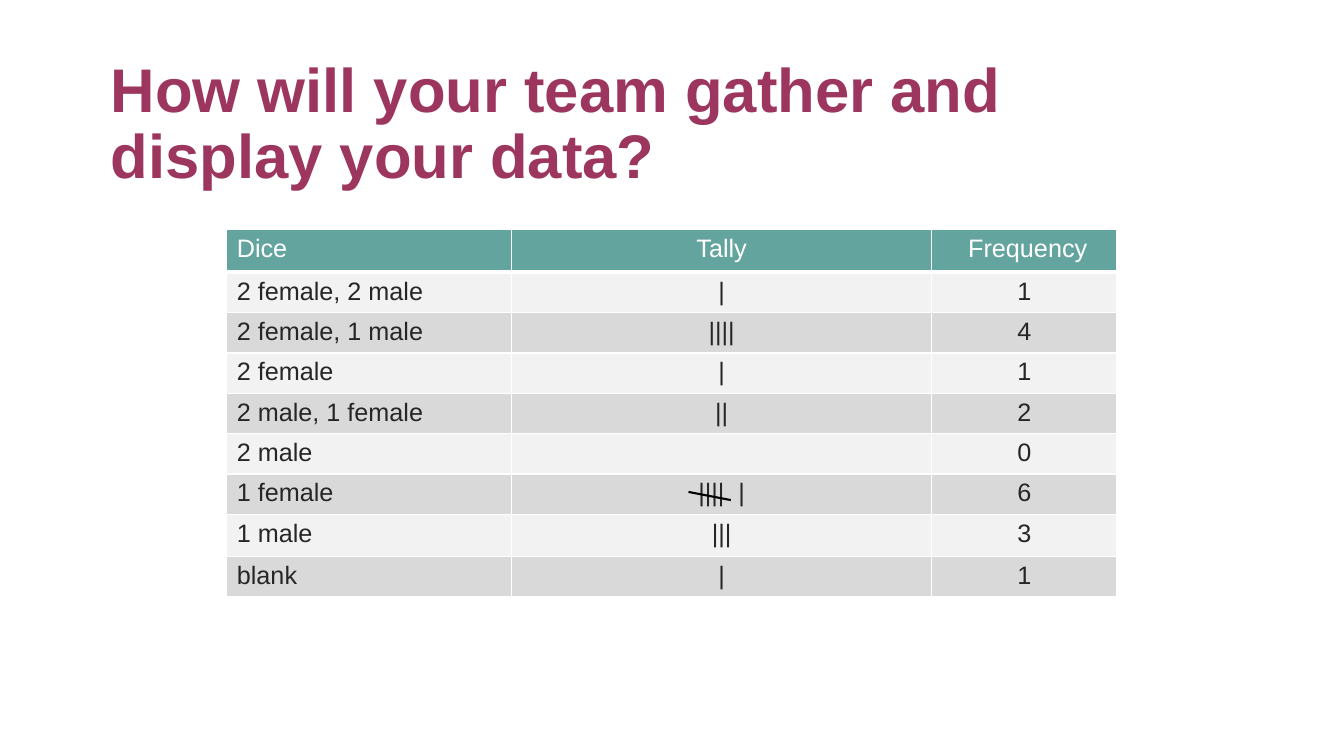
from dataclasses import dataclass

from lxml import etree
from pptx import Presentation
from pptx.dml.color import RGBColor
from pptx.enum import shapes, text
from pptx.oxml import ns
from pptx.util import Pt


@dataclass(frozen=True)
class Theme:
    font: str = "Arial"
    title_size: float = 44
    table_size: float = 18
    title: str = "9D365E"
    header: str = "63A49F"
    bands: tuple = ("F2F2F2", "D9D9D9")
    ink: str = "262626"
    white: str = "FFFFFF"
    stroke: str = "000000"


@dataclass(frozen=True)
class Box:
    left: float
    top: float
    width: float
    height: float

    def lengths(self):
        return [Pt(n) for n in (self.left, self.top, self.width, self.height)]


THEME = Theme()
HEADINGS = ("Dice", "Tally", " Frequency")
OUTCOMES = (
    ("2 female, 2 male", "|", "1"),
    ("2 female, 1 male", "||||", "4"),
    ("2 female", "|", "1"),
    ("2 male, 1 female", "||", "2"),
    ("2 male", "", "0"),
    ("1 female", "||||  |", "6"),
    ("1 male", "|||", "3"),
    ("blank", "|", "1"),
)
COLUMN_SHARES = (0.32, 0.472, 0.208)
ROW_HEIGHTS = (30.24, 28.8, 27.4, 27.4, 27.4, 27.4, 28.8, 30.24, 27.4)


def style_font(font, size, colour, bold=False):
    font.name = THEME.font
    font.size = Pt(size)
    font.bold = bold
    font.color.rgb = RGBColor.from_string(colour)


def add_title(page, box, words):
    frame = page.shapes.add_textbox(*box.lengths()).text_frame
    frame.word_wrap = True
    frame.vertical_anchor = text.MSO_ANCHOR.MIDDLE
    frame.margin_left = frame.margin_right = 0
    frame.margin_top = frame.margin_bottom = 0
    frame.text = words
    para = frame.paragraphs[0]
    para.line_spacing = 0.9
    style_font(para.runs[0].font, THEME.title_size, THEME.title, bold=True)


def add_borders(cell, bottom_width):
    """Draw white cell borders; call before the fill, which must follow them."""
    properties = cell._tc.get_or_add_tcPr()
    for side, width in (("L", 1), ("R", 1), ("T", 1), ("B", bottom_width)):
        line = etree.SubElement(properties, ns.qn(f"a:ln{side}"), w=str(Pt(width)))
        fill = etree.SubElement(line, ns.qn("a:solidFill"))
        etree.SubElement(fill, ns.qn("a:srgbClr"), val=THEME.white)


def fill_cell(cell, words, fill, colour, centred, bottom_width):
    add_borders(cell, bottom_width)
    cell.fill.solid()
    cell.fill.fore_color.rgb = RGBColor.from_string(fill)
    cell.text = words
    para = cell.text_frame.paragraphs[0]
    para.space_before = para.space_after = Pt(4)
    if centred:
        para.alignment = text.PP_ALIGN.CENTER
    for span in para.runs:
        style_font(span.font, THEME.table_size, colour)


def add_tally_table(page, box):
    rows = (HEADINGS, *OUTCOMES)
    table = page.shapes.add_table(len(rows), len(HEADINGS), *box.lengths()).table
    for column, share in zip(table.columns, COLUMN_SHARES):
        column.width = Pt(round(box.width * share, 2))
    for r, (row, height) in enumerate(zip(rows, ROW_HEIGHTS)):
        table.rows[r].height = Pt(height)
        is_header = r == 0
        fill = THEME.header if is_header else THEME.bands[(r - 1) % 2]
        colour = THEME.white if is_header else THEME.ink
        for c, words in enumerate(row):
            fill_cell(table.cell(r, c), words, fill, colour,
                      centred=c > 0, bottom_width=3 if is_header else 1)


def add_tally_stroke(page, box):
    """Strike through the group of five, from top left to bottom right."""
    stroke = page.shapes.add_connector(
        shapes.MSO_CONNECTOR.STRAIGHT, Pt(box.left), Pt(box.top),
        Pt(box.left + box.width), Pt(box.top + box.height))
    stroke.line.width = Pt(1.5)
    stroke.line.color.rgb = RGBColor.from_string(THEME.stroke)
    etree.SubElement(stroke._element.spPr, ns.qn("a:effectLst"))


def add_data_slide(deck):
    page = deck.slides.add_slide(deck.slide_layouts[6])
    add_title(page, Box(79.2, 38.9, 776.2, 101.5),
              "How will your team gather and display your data?")
    table_box = Box(162, 164.2, 635.8, sum(ROW_HEIGHTS))
    add_tally_table(page, table_box)
    add_tally_stroke(page, Box(table_box.left + 329.8, table_box.top + 187.2, 30.2, 5.8))


def main():
    deck = Presentation()
    deck.slide_width, deck.slide_height = Pt(960), Pt(540)
    add_data_slide(deck)
    deck.save("out.pptx")


if __name__ == "__main__":
    main()
